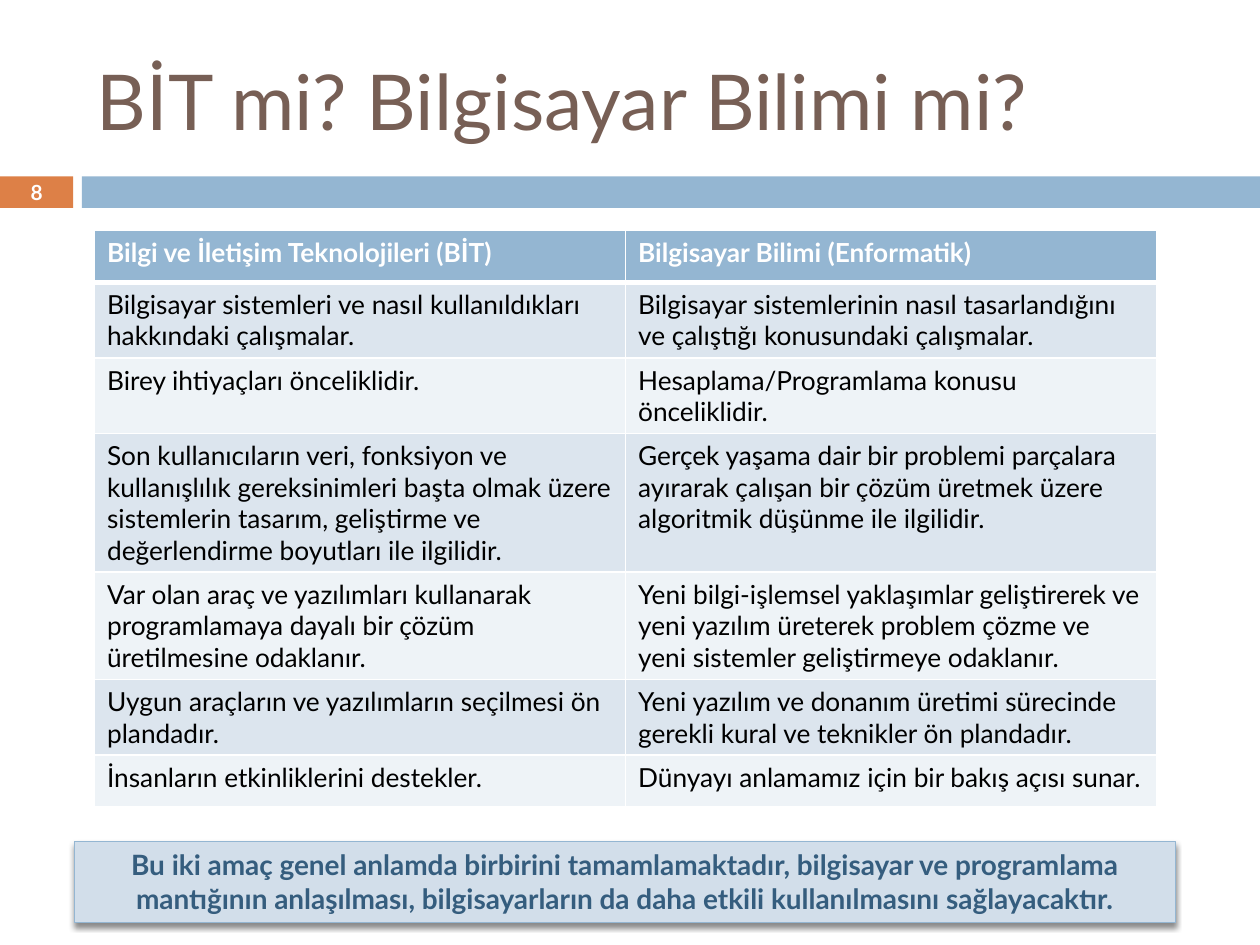
from dataclasses import dataclass
from typing import Optional

from lxml.etree import SubElement
from pptx import Presentation
from pptx.dml.color import RGBColor
from pptx.enum.shapes import MSO_SHAPE as Preset
from pptx.enum.text import MSO_ANCHOR as Anchor, PP_ALIGN as Align
from pptx.oxml.ns import qn
from pptx.util import Inches, Pt

WIDTH, HEIGHT = Inches(10), Inches(7.5)
FONT = "Lato"
WHITE, BLACK, BLUE, ORANGE = "FFFFFF", "000000", "94B6D2", "DD8047"
BROWN, NAVY, PALE_BLUE = "775F55", "355D7E", "D2DEEA"
BANDS = ("EEF3F7", "DCE5EE")
ROW_SHARE = 5.47

COMPARISON = (
    ("Bilgi ve İletişim Teknolojileri (BİT)", "Bilgisayar Bilimi (Enformatik)"),
    ("Bilgisayar sistemleri ve nasıl kullanıldıkları hakkındaki çalışmalar.",
     "Bilgisayar sistemlerinin nasıl tasarlandığını ve çalıştığı konusundaki çalışmalar."),
    ("Birey ihtiyaçları önceliklidir.",
     "Hesaplama/Programlama konusu önceliklidir."),
    ("Son kullanıcıların veri, fonksiyon ve kullanışlılık gereksinimleri başta olmak üzere "
     "sistemlerin tasarım, geliştirme ve değerlendirme boyutları ile ilgilidir.",
     "Gerçek yaşama dair bir problemi parçalara ayırarak çalışan bir çözüm üretmek üzere "
     "algoritmik düşünme ile ilgilidir."),
    ("Var olan araç ve yazılımları kullanarak programlamaya dayalı bir çözüm üretilmesine odaklanır.",
     "Yeni bilgi-işlemsel yaklaşımlar geliştirerek ve yeni yazılım üreterek problem çözme ve "
     "yeni sistemler geliştirmeye odaklanır."),
    ("Uygun araçların ve yazılımların seçilmesi ön plandadır.",
     "Yeni yazılım ve donanım üretimi sürecinde gerekli kural ve teknikler ön plandadır."),
    ("İnsanların etkinliklerini destekler.",
     "Dünyayı anlamamız için bir bakış açısı sunar."),
)


@dataclass(frozen=True)
class Area:
    """A rectangle in percent of the slide's width and height."""
    left: float
    top: float
    width: float
    height: float

    def emu(self) -> tuple:
        """Return left, top, width and height as slide lengths."""
        return (across(self.left), down(self.top), across(self.width), down(self.height))


@dataclass(frozen=True)
class Panel:
    """A filled rectangle with an optional outline."""
    area: Area
    fill: str
    outline: Optional[str] = None


@dataclass(frozen=True)
class Wording:
    """A text and its look."""
    text: str
    size: float
    color: str
    bold: bool = False
    align: Align = Align.LEFT


def across(share: float) -> int:
    """Turn a percentage of the slide's width into a length."""
    return round(WIDTH * share / 100)


def down(share: float) -> int:
    """Turn a percentage of the slide's height into a length."""
    return round(HEIGHT * share / 100)


def paint(target, color: str) -> None:
    """Give a fill a solid colour."""
    target.solid()
    target.fore_color.rgb = RGBColor.from_string(color)


def write(frame, wording: Wording) -> None:
    """Put a formatted text into a text frame."""
    frame.word_wrap = True
    frame.text = wording.text
    paragraph = frame.paragraphs[0]
    paragraph.alignment = wording.align
    font = paragraph.runs[0].font
    font.name, font.size, font.bold = FONT, Pt(wording.size), wording.bold
    font.color.rgb = RGBColor.from_string(wording.color)


def draw_panel(slide, panel: Panel):
    """Draw a flat rectangle and return it."""
    shape = slide.shapes.add_shape(Preset.RECTANGLE, *panel.area.emu())
    shape.shadow.inherit = False
    paint(shape.fill, panel.fill)
    if panel.outline:
        paint(shape.line.fill, panel.outline)
        shape.line.width = Pt(0.79)
    else:
        shape.line.fill.background()
    return shape


def draw_label(slide, area: Area, wording: Wording) -> None:
    """Draw a vertically centred text box."""
    frame = slide.shapes.add_textbox(*area.emu()).text_frame
    frame.vertical_anchor = Anchor.MIDDLE
    write(frame, wording)


def cast_shadow(shape) -> None:
    """Add a soft shadow falling straight down."""
    effects = shape._element.spPr.find(qn("a:effectLst"))
    shadow = SubElement(effects, qn("a:outerShdw"), blurRad=str(Pt(3)), dist=str(Pt(2.4)),
                        dir="5400000", algn="ctr", rotWithShape="0")
    tint = SubElement(shadow, qn("a:srgbClr"), val=BLACK)
    SubElement(tint, qn("a:alpha"), val="45000")


def rule_cell(cell, row: int) -> None:
    """Draw white cell borders, thick between the header and the body."""
    properties = cell._tc.get_or_add_tcPr()
    thick_side = {0: "B", 1: "T"}.get(row)
    for position, side in enumerate("LRTB"):
        border = SubElement(properties, qn(f"a:ln{side}"),
                            w=str(Pt(3 if side == thick_side else 1)))
        SubElement(SubElement(border, qn("a:solidFill")), qn("a:srgbClr"), val=WHITE)
        properties.insert(position, border)


def draw_comparison(slide, area: Area) -> None:
    """Draw the two-column comparison table with banded rows."""
    table = slide.shapes.add_table(len(COMPARISON), 2, *area.emu()).table
    for column in table.columns:
        column.width = across(area.width / 2)
    for row, statements in enumerate(COMPARISON):
        table.rows[row].height = down(ROW_SHARE)
        header = row == 0
        for column, statement in enumerate(statements):
            cell = table.cell(row, column)
            paint(cell.fill, BLUE if header else BANDS[row % 2])
            write(cell.text_frame, Wording(statement, 15, WHITE if header else BLACK, header))
            rule_cell(cell, row)


def main() -> None:
    """Build and save the slide."""
    deck = Presentation()
    deck.slide_width, deck.slide_height = WIDTH, HEIGHT
    slide = deck.slides.add_slide(deck.slide_layouts[6])

    number_area = Area(0, 18.67, 5.8, 3.33)
    draw_panel(slide, Panel(number_area, ORANGE))
    draw_panel(slide, Panel(Area(6.5, 18.67, 93.5, 3.33), BLUE))
    draw_label(slide, Area(6.7, 3.33, 89.2, 14.4),
               Wording("BİT mi? Bilgisayar Bilimi mi?", 44, BROWN))
    draw_comparison(slide, Area(7.5, 24.4, 84.3, ROW_SHARE * len(COMPARISON)))

    summary = draw_panel(slide, Panel(Area(5.9, 89.07, 87.4, 8.53), PALE_BLUE, BLUE))
    cast_shadow(summary)
    summary.text_frame.vertical_anchor = Anchor.TOP
    write(summary.text_frame, Wording(
        "Bu iki amaç genel anlamda birbirini tamamlamaktadır, bilgisayar ve programlama "
        "mantığının anlaşılması, bilgisayarların da daha etkili kullanılmasını sağlayacaktır.",
        16, NAVY, True, Align.CENTER))
    draw_label(slide, number_area, Wording("8", 11.9, WHITE, True, Align.CENTER))

    deck.save("out.pptx")


if __name__ == "__main__":
    main()
